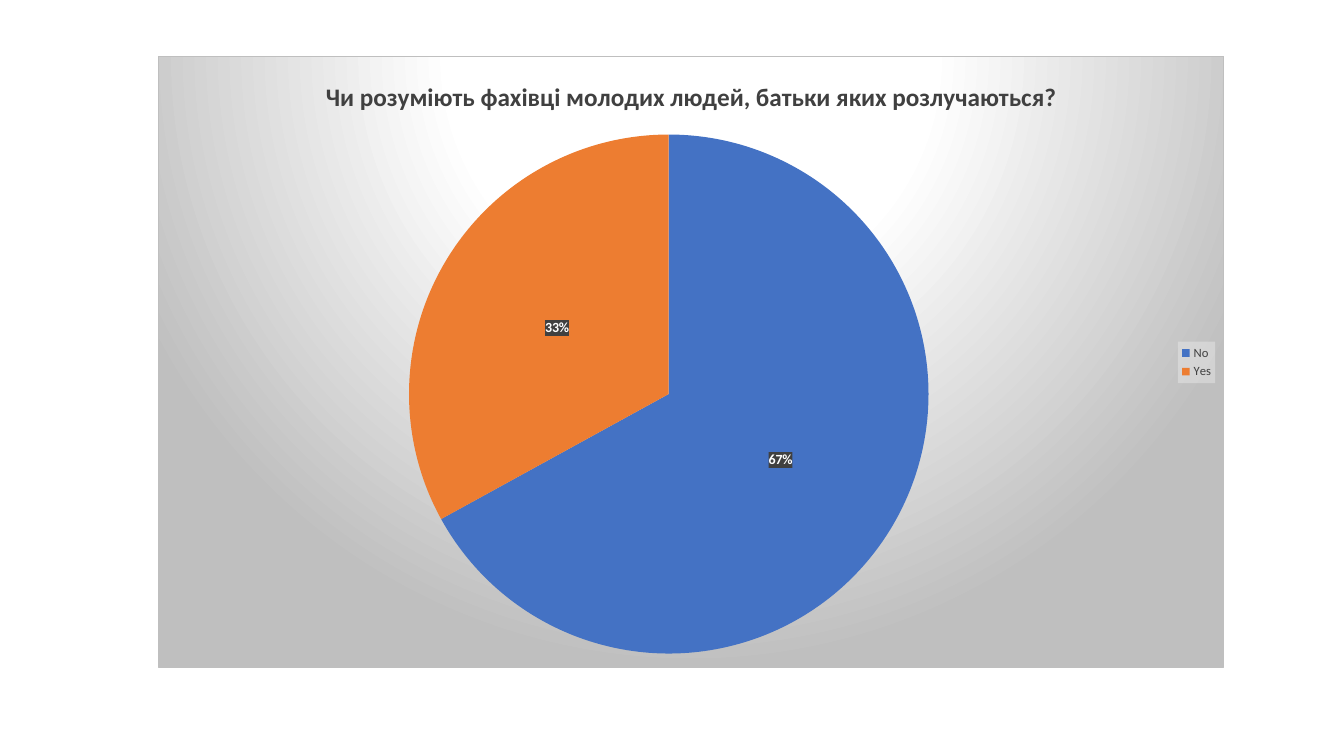
"""Build a slide with one pie chart on a radial grey panel."""
import dataclasses

import lxml.etree
import pptx
import pptx.chart.data
import pptx.dml.color
import pptx.enum.chart
import pptx.oxml.ns
import pptx.util

TITLE = "Чи розуміють фахівці молодих людей, батьки яких розлучаються?"
ANSWERS = {"No": 67, "Yes": 33}
SLIDE = (13.33, 7.5)
PANEL = (1.57, 0.56, 10.57, 6.07)
PIE_SHARES = {"x": 0.235, "y": 0.127, "w": 0.488, "h": 0.85}


@dataclasses.dataclass(frozen=True)
class Theme:
    font: str = "Calibri"
    text: str = "404040"
    label: str = "FFFFFF"
    base: str = "000000"
    panel: str = "BFBFBF"
    legend: str = "F2F2F2"
    slices: tuple = ("4472C4", "ED7D31")
    title_size: int = 18
    base_size: int = 10
    legend_size: int = 9


THEME = Theme()


def style_font(font, size, colour, bold=False):
    font.name = THEME.font
    font.size = pptx.util.Pt(size)
    font.bold = bold
    font.color.rgb = pptx.dml.color.RGBColor.from_string(colour)


def add_fill(parent, content):
    namespaces = pptx.oxml.ns.nsdecls("c", "a")
    properties = lxml.etree.fromstring(f"<c:spPr {namespaces}>{content}</c:spPr>")
    parent.find(pptx.oxml.ns.qn("c:txPr")).addprevious(properties)


def solid(colour, alpha):
    return (f'<a:solidFill><a:srgbClr val="{colour}"><a:alpha val="{alpha * 1000}"/>'
            "</a:srgbClr></a:solidFill><a:ln><a:noFill/></a:ln>")


def panel_fill():
    stops = ((0, THEME.label), (39, THEME.label), (100, THEME.panel))
    gradient = "".join(f'<a:gs pos="{share * 1000}"><a:srgbClr val="{colour}"/></a:gs>'
                       for share, colour in stops)
    return (f'<a:gradFill><a:gsLst>{gradient}</a:gsLst><a:path path="circle">'
            '<a:fillToRect l="50000" t="-80000" r="50000" b="180000"/></a:path></a:gradFill>'
            f'<a:ln w="9525"><a:solidFill><a:srgbClr val="{THEME.panel}"/></a:solidFill></a:ln>')


def place_pie(chart):
    area = chart.plots[0]._element.getparent()
    for layout in area.findall(pptx.oxml.ns.qn("c:layout")):
        area.remove(layout)
    modes = "".join(f'<c:{axis}Mode val="edge"/>' for axis in "xy")
    shares = "".join(f'<c:{key} val="{share}"/>' for key, share in PIE_SHARES.items())
    area.insert(0, lxml.etree.fromstring(
        f'<c:layout {pptx.oxml.ns.nsdecls("c")}><c:manualLayout>'
        f'<c:layoutTarget val="inner"/>{modes}{shares}</c:manualLayout></c:layout>'))


def add_pie(page):
    answers = pptx.chart.data.CategoryChartData()
    answers.categories = list(ANSWERS)
    answers.add_series("Series 1", list(ANSWERS.values()))
    chart = page.shapes.add_chart(pptx.enum.chart.XL_CHART_TYPE.PIE,
                                  *map(pptx.util.Inches, PANEL), answers).chart
    style_font(chart.font, THEME.base_size, THEME.base)
    add_fill(chart._chartSpace, panel_fill())
    place_pie(chart)

    chart.has_title = True
    chart.chart_title.include_in_layout = False
    title = chart.chart_title.text_frame
    title.text = TITLE
    style_font(title.paragraphs[0].runs[0].font, THEME.title_size, THEME.text, True)

    chart.has_legend = True
    chart.legend.position = pptx.enum.chart.XL_LEGEND_POSITION.RIGHT
    chart.legend.include_in_layout = False
    style_font(chart.legend.font, THEME.legend_size, THEME.text)
    add_fill(chart.legend._element, solid(THEME.legend, 39))

    plot = chart.plots[0]
    plot.vary_by_categories = True
    series = plot.series[0]
    for index, colour in enumerate(THEME.slices):
        point = series.points[index].format
        point.fill.solid()
        point.fill.fore_color.rgb = pptx.dml.color.RGBColor.from_string(colour)
        point.line.fill.background()

    labels = series.data_labels
    labels.show_percentage = True
    labels.show_value = False
    labels.number_format = "0%"
    labels.number_format_is_linked = False
    labels.position = pptx.enum.chart.XL_LABEL_POSITION.CENTER
    style_font(labels.font, THEME.base_size, THEME.label, True)
    add_fill(labels._element, solid(THEME.text, 90))


def main():
    deck = pptx.Presentation()
    deck.slide_width, deck.slide_height = map(pptx.util.Inches, SLIDE)
    page = deck.slides.add_slide(deck.slide_layouts[6])
    add_pie(page)
    deck.save("out.pptx")


if __name__ == "__main__":
    main()
